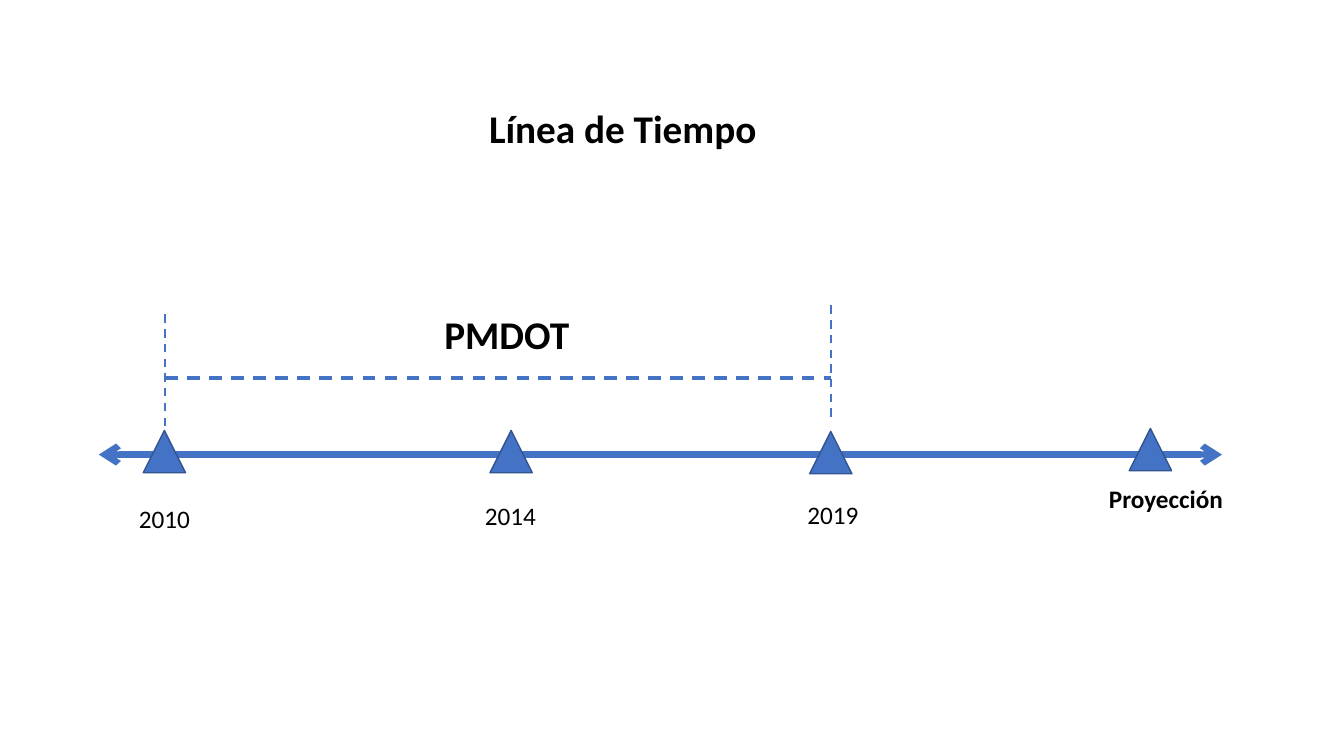
from lxml import etree
from pptx import Presentation
from pptx.dml.color import RGBColor
from pptx.enum.dml import MSO_LINE
from pptx.enum.shapes import MSO_CONNECTOR, MSO_SHAPE
from pptx.enum.text import MSO_ANCHOR, MSO_AUTO_SIZE, PP_ALIGN
from pptx.oxml.ns import qn
from pptx.util import Inches, Pt

BLUE = RGBColor(0x44, 0x72, 0xC4)
DARK_BLUE = RGBColor(0x32, 0x54, 0x91)
BLACK = RGBColor(0, 0, 0)
FONT = "Calibri"
TITLE_ONLY = 5
STRAIGHT = MSO_CONNECTOR.STRAIGHT
TRIANGLE = MSO_SHAPE.ISOSCELES_TRIANGLE
DASH = MSO_LINE.DASH
LEFT = PP_ALIGN.LEFT
TOP = MSO_ANCHOR.TOP
FIT_SHAPE = MSO_AUTO_SIZE.SHAPE_TO_FIT_TEXT

AXIS_Y = 4.51
SPAN_Y = 3.75
GUIDE_HEIGHT = 1.11
MARKER_SIZE = 0.42
MILESTONES = [
    # label, marker left, marker top, label left, label top, label width, bold
    ("2010", 1.42, 4.27, 1.28, 4.94, 0.71, False),
    ("2014", 4.86, 4.27, 4.71, 4.91, 0.71, False),
    ("2019", 8.03, 4.28, 7.91, 4.9, 0.71, False),
    ("Proyección", 11.2, 4.25, 10.9, 4.75, 1.36, True),
]
GUIDES = [(1.64, 3.12), (8.24, 3.03)]


def write_text(box, text, size, bold, wrap=True):
    """Fill a text shape with one left-aligned line."""
    frame = box.text_frame
    frame.text = text
    frame.word_wrap = wrap
    frame.auto_size = FIT_SHAPE
    frame.vertical_anchor = TOP
    para = frame.paragraphs[0]
    para.alignment = LEFT
    para.line_spacing = 1.0
    para.space_before = Pt(0)
    font = para.runs[0].font
    font.name = FONT
    font.size = Pt(size)
    font.bold = bold
    font.color.rgb = BLACK


def place_title(page, text, left, top, width, height):
    """Move and format the title placeholder."""
    title = page.shapes.title
    title.left, title.top = Inches(left), Inches(top)
    title.width, title.height = Inches(width), Inches(height)
    write_text(title, text, 28, True)


def add_label(page, text, left, top, width, height, size, bold, wrap=True):
    """Add a text box."""
    box = page.shapes.add_textbox(
        Inches(left), Inches(top), Inches(width), Inches(height))
    write_text(box, text, size, bold, wrap)


def add_line(page, start, end, weight, dash=None, arrows=False):
    """Add a blue line, optionally dashed or with arrows at both ends."""
    line = page.shapes.add_connector(STRAIGHT, *map(Inches, start + end))
    line.line.color.rgb = BLUE
    line.line.width = Pt(weight)
    if dash is not None:
        line.line.dash_style = dash
    properties = line._element.spPr
    if arrows:
        outline = properties.find(qn("a:ln"))
        for tag in ("a:headEnd", "a:tailEnd"):
            etree.SubElement(outline, qn(tag)).set("type", "arrow")
    etree.SubElement(properties, qn("a:effectLst"))


def add_marker(page, left, top):
    """Add a triangle that marks a date."""
    marker = page.shapes.add_shape(
        TRIANGLE, Inches(left), Inches(top),
        Inches(MARKER_SIZE), Inches(MARKER_SIZE))
    marker.shadow.inherit = False
    marker.fill.solid()
    marker.fill.fore_color.rgb = BLUE
    marker.line.color.rgb = DARK_BLUE
    marker.line.width = Pt(1)


def main():
    """Build the timeline slide."""
    deck = Presentation()
    deck.slide_width, deck.slide_height = Inches(13.33), Inches(7.5)
    page = deck.slides.add_slide(deck.slide_layouts[TITLE_ONLY])
    place_title(page, "Línea de Tiempo", 4.75, 0.98, 3.6, 0.57)
    add_line(page, (0.98, AXIS_Y), (12.12, AXIS_Y), 4.5, arrows=True)
    for text, x, y, label_x, label_y, width, bold in MILESTONES:
        add_marker(page, x, y)
        add_label(page, text, label_x, label_y, width, 0.4, 18, bold, wrap=False)
    add_line(page, (GUIDES[0][0], SPAN_Y), (GUIDES[1][0], SPAN_Y), 2.25, DASH)
    for x, y in GUIDES:
        add_line(page, (x, y), (x, y + GUIDE_HEIGHT), 1.5, DASH)
    add_label(page, "PMDOT", 4.31, 3.03, 3.6, 0.57, 28, True)
    deck.save("out.pptx")


if __name__ == "__main__":
    main()
